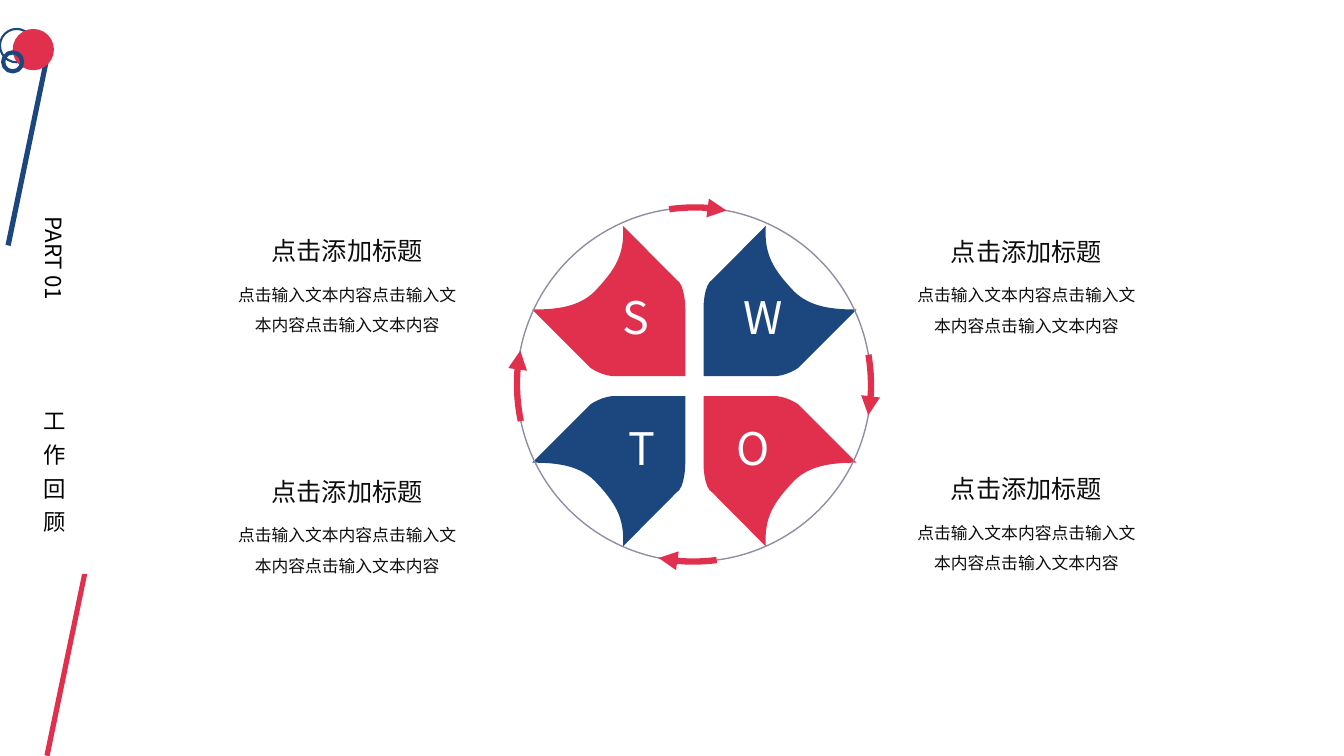
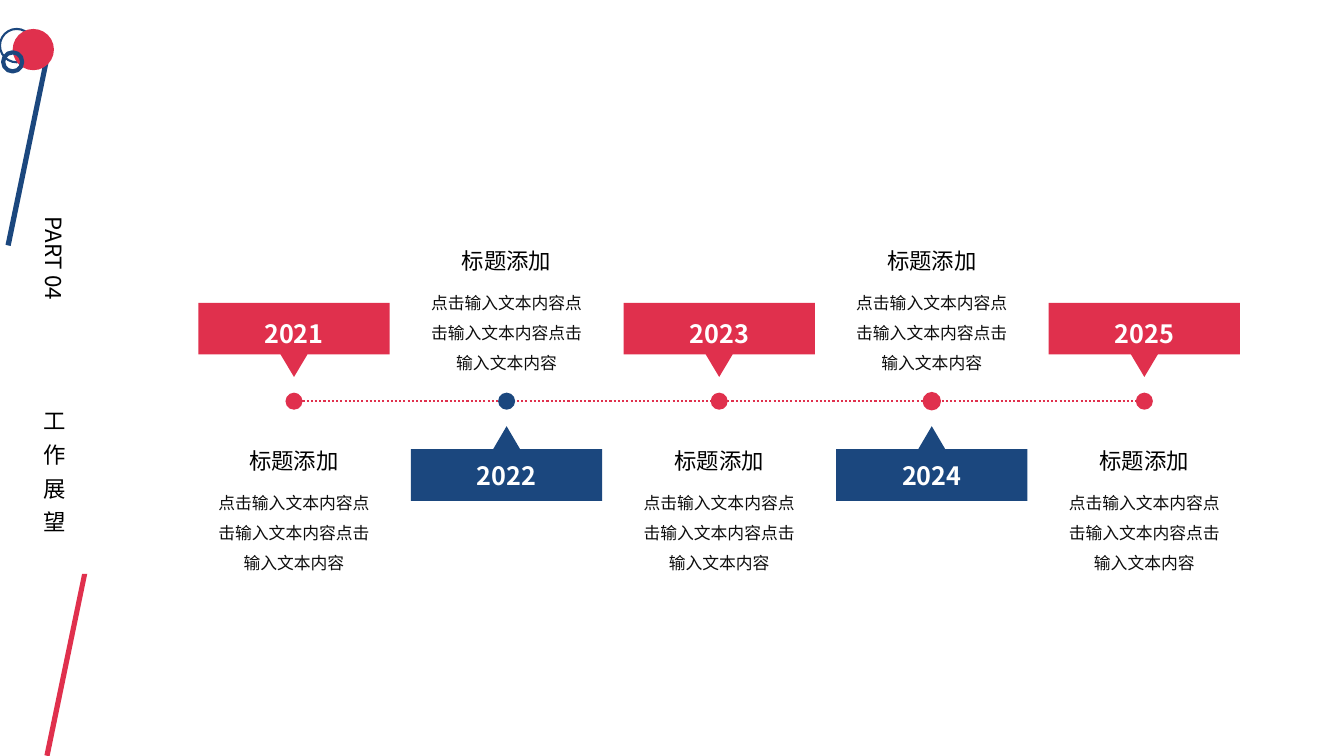
from dataclasses import dataclass

from lxml.etree import SubElement
from pptx import Presentation
from pptx.dml.color import RGBColor
from pptx.enum.dml import MSO_LINE
from pptx.enum.shapes import MSO_CONNECTOR, MSO_SHAPE
from pptx.enum.text import MSO_ANCHOR, MSO_AUTO_SIZE, PP_ALIGN
from pptx.oxml.ns import qn
from pptx.util import Cm, Pt


@dataclass(frozen=True)
class Theme:
    red: RGBColor = RGBColor(0xE0, 0x30, 0x4D)
    blue: RGBColor = RGBColor(0x1B, 0x47, 0x7E)
    ring: RGBColor = RGBColor(0x91, 0x8D, 0xA4)
    ink: RGBColor = RGBColor(0x0D, 0x0D, 0x0D)
    black: RGBColor = RGBColor(0, 0, 0)
    white: RGBColor = RGBColor(0xFF, 0xFF, 0xFF)
    font: str = "Noto Sans CJK SC"
    letter: int = 32
    heading: int = 18
    label: int = 16
    body: int = 12


THEME = Theme()
BODY_TEXT = "点击输入文本内容" * 3
TITLE_ONLY = 5

# One petal, lower right, in cm from the flower's centre:
# one point is a straight edge, three points are a Bezier curve
PETAL_START = (4.09, 1.93)
PETAL_EDGES = [
    [(2.62, 0.46)],
    [(2.62, 0.46), (2.29, 0.23), (1.96, 0.25)],
    [(0.23, 0.25)],
    [(0.23, 1.96)],
    [(0.23, 1.96), (0.23, 2.57), (0.46, 2.69)],
    [(1.8, 4.04)],
    [(1.75, 3.3), (2.01, 2.92), (2.51, 2.39)],
    [(2.92, 1.98), (3.51, 1.93), PETAL_START],
]


# Text
def style_paragraph(paragraph, size, color, bold=False, spacing=0):
    font = paragraph.font
    font.size, font.bold, font.name = Pt(size), bold, THEME.font
    font.color.rgb = color
    properties = paragraph._p.pPr.find(qn("a:defRPr"))
    SubElement(properties, qn("a:ea"), typeface=THEME.font)
    if spacing:
        properties.set("spc", str(spacing * 100))


def write_text(shape, text, size, color, anchor=MSO_ANCHOR.TOP,
               insets=(0, 0), bold=False):
    frame = shape.text_frame
    frame.word_wrap = True
    frame.auto_size = MSO_AUTO_SIZE.NONE
    frame.vertical_anchor = anchor
    frame.margin_left = frame.margin_right = 0
    frame.margin_top, frame.margin_bottom = (Cm(inset) for inset in insets)
    paragraph = frame.paragraphs[0]
    paragraph.text = text
    paragraph.alignment = PP_ALIGN.CENTER
    style_paragraph(paragraph, size, color, bold)
    return paragraph


def add_text(slide, center, top, width, height, text, size, color, **options):
    box = slide.shapes.add_textbox(
        Cm(center - width / 2), Cm(top), Cm(width), Cm(height))
    return write_text(box, text, size, color, **options)


def write_vertical(shape, left, top, height, text, spacing=0):
    shape.left, shape.top, shape.width, shape.height = (
        Cm(left), Cm(top), Cm(1.19), Cm(height))
    frame = shape.text_frame
    frame.word_wrap = True
    frame.auto_size = MSO_AUTO_SIZE.NONE
    frame.vertical_anchor = MSO_ANCHOR.TOP
    frame._txBody.bodyPr.set("vert", "eaVert")
    paragraph = frame.paragraphs[0]
    paragraph.text = text
    paragraph.alignment = PP_ALIGN.JUSTIFY
    style_paragraph(paragraph, THEME.label, THEME.black, spacing=spacing)


# Shapes
def paint(shape, fill=None, line=None, line_width=1):
    shape.shadow.inherit = False
    if fill is None:
        shape.fill.background()
    else:
        shape.fill.solid()
        shape.fill.fore_color.rgb = fill
    if line is None:
        shape.line.fill.background()
    else:
        shape.line.color.rgb = line
        shape.line.width = Pt(line_width)


def add_round(slide, left, top, diameter, kind=MSO_SHAPE.OVAL, **colors):
    shape = slide.shapes.add_shape(
        kind, Cm(left), Cm(top), Cm(diameter), Cm(diameter))
    paint(shape, **colors)
    return shape


def add_polygon(slide, points, fill):
    corners = [(Cm(x), Cm(y)) for x, y in points]
    builder = slide.shapes.build_freeform(*corners[0])
    builder.add_line_segments(corners[1:], close=True)
    shape = builder.convert_to_shape()
    paint(shape, fill)
    return shape


def add_arc_arrow(slide, left, top, diameter, start, end):
    arc = add_round(slide, left, top, diameter, MSO_SHAPE.ARC,
                    line=THEME.red, line_width=4.5)
    # Angles are stored in 1/60000 degree, adjustments in 1/100000
    arc.adjustments[0], arc.adjustments[1] = start * 0.6, end * 0.6
    SubElement(arc.line._get_or_add_ln(), qn("a:tailEnd"), type="triangle")


def add_petal(slide, center_x, center_y, side_x, side_y, fill):
    def place(point):
        return center_x + side_x * point[0], center_y + side_y * point[1]

    corners = [PETAL_START] + [edge[-1] for edge in PETAL_EDGES]
    shape = add_polygon(slide, [place(corner) for corner in corners], fill)
    # Turn the straight segments of curved edges into Bezier curves
    segments = list(shape._element.iter(qn("a:lnTo")))
    for segment, edge in zip(segments, PETAL_EDGES):
        if len(edge) == 3:
            segment.tag = qn("a:cubicBezTo")
            segment.remove(segment[0])
            for x, y in map(place, edge):
                SubElement(segment, qn("a:pt"), x=str(Cm(x) - shape.left),
                           y=str(Cm(y) - shape.top))


# Side band shared by all slides
def add_slash(slide, dx, dy, fill):
    corners = [(0.14, 6.17), (1.09, 1.6), (1.22, 1.6), (0.27, 6.2)]
    add_polygon(slide, [(x + dx, y + dy) for x, y in corners], fill)


def add_section_slide(presentation, part, title):
    slide = presentation.slides.add_slide(
        presentation.slide_layouts[TITLE_ONLY])
    add_slash(slide, 0, 0, THEME.blue)
    add_round(slide, 0, 0.73, 0.84, line=THEME.blue, line_width=1.5)
    add_round(slide, 0.32, 0.73, 1.04, fill=THEME.red)
    add_round(slide, 0.08, 1.32, 0.48, line=THEME.blue, line_width=3)
    add_slash(slide, 0.98, 12.86, THEME.red)
    write_vertical(slide.shapes.title, 0.77, 10.21, 4.22, title, spacing=8)
    part_label = slide.shapes.add_textbox(0, 0, 0, 0)
    write_vertical(part_label, 0.64, 5.21, 4.45, part)
    return slide


# SWOT flower
def add_swot(slide):
    for side_x, side_y, color in [(1, 1, THEME.red), (-1, 1, THEME.blue),
                                  (1, -1, THEME.blue), (-1, -1, THEME.red)]:
        add_petal(slide, 17.5, 9.73, side_x, side_y, color)

    ring = (13.03, 5.23, 8.92)
    add_round(slide, *ring, line=THEME.ring)
    for start, end in [(350.3, 9.97), (82.62, 101.51),
                       (168.06, 191.02), (261.97, 280.57)]:
        add_arc_arrow(slide, *ring, start, end)

    for letter, x, top in [("S", 16.02, 7.16), ("W", 19.24, 7.16),
                           ("O", 18.97, 10.46), ("T", 16.19, 10.46)]:
        add_text(slide, x, top, 1.5, 1.63, letter, THEME.letter, THEME.white,
                 anchor=MSO_ANCHOR.MIDDLE)


def add_swot_note(slide, center, top):
    add_text(slide, center, top, 4.27, 1.17, "点击添加标题", THEME.heading,
             THEME.ink, anchor=MSO_ANCHOR.BOTTOM)
    paragraph = add_text(slide, center, top + 1.39, 5.72, 1.7, BODY_TEXT,
                         THEME.body, THEME.ink)
    paragraph.line_spacing = 1.5
    paragraph.space_before = Pt(5.9)


# Timeline
def add_year(slide, center, year, above):
    if above:
        far, near, tip, color, insets = 7.63, 8.93, 9.5, THEME.red, (0, 0.3)
    else:
        far, near, tip, color, insets = 12.62, 11.32, 10.74, THEME.blue, (0.61, 0)
    half, pointer = 2.41, 0.34
    callout = add_polygon(slide, [
        (center - half, far), (center + half, far), (center + half, near),
        (center + pointer, near), (center, tip), (center - pointer, near),
        (center - half, near)], color)
    write_text(callout, year, THEME.heading, THEME.white, bold=True,
               anchor=MSO_ANCHOR.MIDDLE, insets=insets)


def add_year_note(slide, center, top):
    add_text(slide, center, top, 3, 0.8, "标题添加", THEME.label, THEME.black)
    paragraph = add_text(slide, center, top + 0.89, 3.94, 2.4, BODY_TEXT,
                         THEME.body, THEME.ink)
    paragraph.line_spacing = 1.5


def add_timeline(slide):
    first, last, axis, dot = 7.41, 28.84, 10.11, 0.43
    stops = [  # year, dot colour, dot outline
        ("2021", THEME.red, None), ("2022", THEME.blue, None),
        ("2023", THEME.red, None), ("2024", THEME.red, THEME.red),
        ("2025", THEME.red, None),
    ]
    pitch = (last - first) / (len(stops) - 1)
    line = slide.shapes.add_connector(
        MSO_CONNECTOR.STRAIGHT, Cm(first), Cm(axis), Cm(last), Cm(axis))
    line.line.color.rgb = THEME.red
    line.line.width = Pt(1.5)
    line.line.dash_style = MSO_LINE.ROUND_DOT
    SubElement(line._element.spPr, qn("a:effectLst"))

    for index, (year, fill, outline) in enumerate(stops):
        center = first + pitch * index
        above = index % 2 == 0
        add_round(slide, center - dot / 2, axis - dot / 2, dot,
                  fill=fill, line=outline)
        add_year(slide, center, year, above)
        add_year_note(slide, center, 11.26 if above else 6.23)


def main():
    presentation = Presentation()
    presentation.slide_width, presentation.slide_height = Cm(33.87), Cm(19.05)

    review = add_section_slide(presentation, "PART 01", "工作回顾")
    add_swot(review)
    for center, top in [(8.75, 5.52), (8.75, 11.59),
                        (25.87, 5.54), (25.87, 11.52)]:
        add_swot_note(review, center, top)

    outlook = add_section_slide(presentation, "PART 04", "工作展望")
    add_timeline(outlook)

    presentation.save("out.pptx")


if __name__ == "__main__":
    main()
